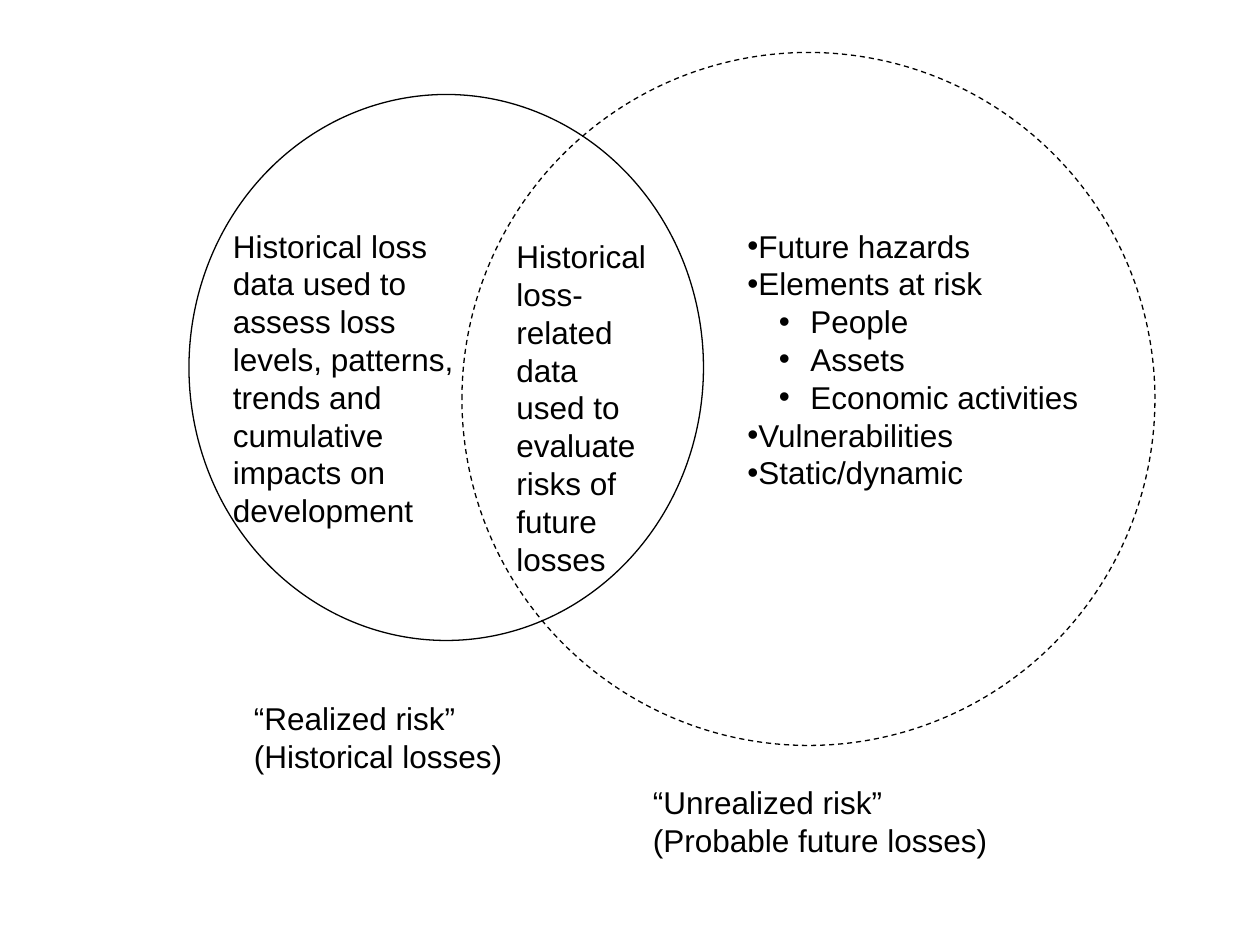
from lxml import etree
from pptx import Presentation
from pptx import util as u
from pptx.dml.color import RGBColor
from pptx.enum import dml, shapes, text
from pptx.oxml import ns

BLACK = RGBColor(0, 0, 0)
COLUMNS, ROWS = 120, 90

presentation = Presentation()
presentation.slide_width = u.Inches(10)
presentation.slide_height = u.Inches(7.5)
slide = presentation.slides.add_slide(presentation.slide_layouts[6])
column = presentation.slide_width / COLUMNS
row = presentation.slide_height / ROWS


def grid_box(left, top, width, height):
    return [round(n * unit) for n, unit in zip((left, top, width, height), (column, row) * 2)]


circles = [
    ((18, 9, 49, 52), dml.MSO_LINE.SOLID),
    ((44, 5, 66, 66), dml.MSO_LINE.DASH),
]
for box, dash in circles:
    circle = slide.shapes.add_shape(shapes.MSO_SHAPE.OVAL, *grid_box(*box))
    circle.shadow.inherit = False
    circle.fill.background()
    circle.line.color.rgb = BLACK
    for name, value in {"width": u.Pt(0.75), "dash_style": dash}.items():
        setattr(circle.line, name, value)

PLAIN, BULLET, SUB_BULLET = None, (0, 0), (0.5, -0.25)
labels = [
    ((23, 66, 31, 8.4), [("“Realized risk”", PLAIN), ("(Historical losses)", PLAIN)]),
    ((61, 74, 35, 8.4), [("“Unrealized risk” (Probable future losses)", PLAIN)]),
    ((48, 22, 15, 34), [
        ("Historical loss-related data used to evaluate risks of", PLAIN),
        ("future", PLAIN),
        ("losses", PLAIN),
    ]),
    ((70, 21, 35, 30), [
        ("Future hazards", BULLET),
        ("Elements at risk", BULLET),
        ("People", SUB_BULLET),
        ("Assets", SUB_BULLET),
        ("Economic activities", SUB_BULLET),
        ("Vulnerabilities", BULLET),
        ("Static/dynamic", BULLET),
    ]),
    ((21, 21, 23.4, 30), [
        ("Historical loss data used to assess loss levels, patterns, "
         "trends and cumulative impacts on development", PLAIN),
    ]),
]
frame_format = {"word_wrap": True, "auto_size": text.MSO_AUTO_SIZE.SHAPE_TO_FIT_TEXT}
font_format = {"name": "Arial", "size": u.Pt(18)}

for box, lines in labels:
    frame = slide.shapes.add_textbox(*grid_box(*box)).text_frame
    for name, value in frame_format.items():
        setattr(frame, name, value)
    for index, (line, bullet) in enumerate(lines):
        paragraph = frame.add_paragraph() if index else frame.paragraphs[0]
        run = paragraph.add_run()
        run.text = line
        run.font.color.rgb = BLACK
        for name, value in font_format.items():
            setattr(run.font, name, value)
        if bullet is not PLAIN:
            paragraph.level = int(bullet == SUB_BULLET)
            properties = paragraph._p.get_or_add_pPr()
            for name, inches in zip(("marL", "indent"), bullet):
                properties.set(name, str(u.Inches(inches)))
            etree.SubElement(properties, ns.qn("a:buFont")).set("typeface", "Arial")
            etree.SubElement(properties, ns.qn("a:buChar")).set("char", "•")

presentation.save("out.pptx")
